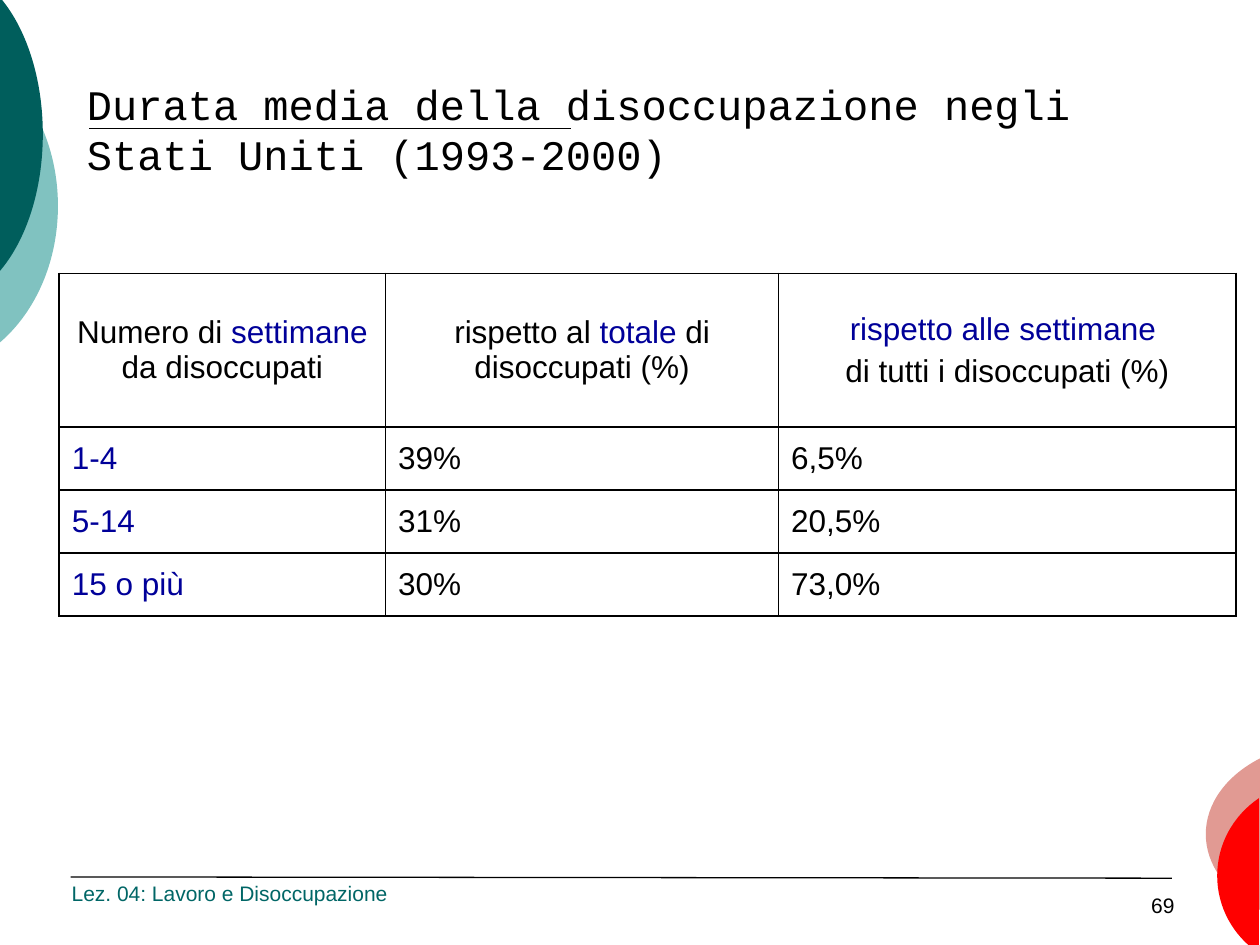
from pptx import Presentation
from pptx.dml.color import RGBColor
from pptx.enum.shapes import MSO_CONNECTOR
from pptx.enum.text import MSO_ANCHOR, MSO_AUTO_SIZE, PP_ALIGN
from pptx.oxml.ns import qn
from pptx.util import Inches, Pt
from lxml.etree import SubElement

BLACK = RGBColor(0x00, 0x00, 0x00)
WHITE = RGBColor(0xFF, 0xFF, 0xFF)
NAVY = RGBColor(0x00, 0x00, 0x99)
TEAL = RGBColor(0x00, 0x66, 0x66)
DARK_TEAL = RGBColor(0x00, 0x5E, 0x5C)
LIGHT_TEAL = RGBColor(0x80, 0xC2, 0xC0)
PINK = RGBColor(0xE1, 0x9A, 0x93)
RED = RGBColor(0xFF, 0x00, 0x00)

ARC_STEPS = [
    ("a:moveTo", [(784, 90)]),
    ("a:cubicBezTo", [(920, 184), (1000, 336), (1000, 500)]),
    ("a:cubicBezTo", [(1000, 664), (920, 816), (784, 910)]),
    ("a:lnTo", [(784, 90)]),
    ("a:close", []),
]
COLUMN_WIDTHS = [2.59, 3.12, 3.63]
ROW_HEIGHTS = [1.22, 0.5, 0.5, 0.5]
HEADER = [
    [[("Numero di ", BLACK), ("settimane", NAVY), (" da disoccupati", BLACK)]],
    [[("rispetto al ", BLACK), ("totale", NAVY), (" di disoccupati (%)", BLACK)]],
    [[("rispetto alle settimane ", NAVY)], [("di tutti i disoccupati (%)", BLACK)]],
]
DURATIONS = [
    ("1-4", "39%", "6,5%"),
    ("5-14", "31%", "20,5%"),
    ("15 o più", "30%", "73,0%"),
]


def add_arc(page, left, top, width, height, color, rotation=0):
    """Add the filled right-hand segment of an ellipse that fills the given frame."""
    builder = page.shapes.build_freeform(Inches(left), Inches(top))
    builder.add_line_segments([(Inches(left + width), Inches(top + height))])
    shape = builder.convert_to_shape()
    outline = shape._element.spPr.find(".//" + qn("a:path"))
    outline.clear()
    outline.set("w", "1000")
    outline.set("h", "1000")
    for tag, points in ARC_STEPS:
        step = SubElement(outline, qn(tag))
        for x, y in points:
            SubElement(step, qn("a:pt"), x=str(x), y=str(y))
    shape.rotation = rotation
    shape.shadow.inherit = False
    shape.fill.solid()
    shape.fill.fore_color.rgb = color
    shape.line.fill.background()


def add_rule(page, left, top, right, bottom, weight):
    """Add a thin black line."""
    rule = page.shapes.add_connector(
        MSO_CONNECTOR.STRAIGHT, Inches(left), Inches(top), Inches(right), Inches(bottom)
    )
    rule.line.color.rgb = BLACK
    rule.line.width = Pt(weight)
    SubElement(rule._element.spPr, qn("a:effectLst"))


def set_font(font, name, size, color):
    """Set the typeface, size and colour of a font."""
    font.name = name
    font.size = Pt(size)
    font.color.rgb = color


def add_title(page, text):
    """Place and format the title placeholder."""
    title = page.shapes.title
    title.left, title.top = Inches(0.59), Inches(0.57)
    title.width, title.height = Inches(8.74), Inches(0.9)
    frame = title.text_frame
    frame.text = text
    frame.word_wrap = True
    frame.auto_size = MSO_AUTO_SIZE.NONE
    frame.vertical_anchor = MSO_ANCHOR.BOTTOM
    para = frame.paragraphs[0]
    para.alignment = PP_ALIGN.LEFT
    set_font(para.font, "Courier New", 24, BLACK)


def add_label(page, text, left, top, width, height, color, alignment):
    """Add a small text box anchored at its bottom."""
    box = page.shapes.add_textbox(Inches(left), Inches(top), Inches(width), Inches(height))
    frame = box.text_frame
    frame.text = text
    frame.word_wrap = True
    frame.vertical_anchor = MSO_ANCHOR.BOTTOM
    para = frame.paragraphs[0]
    para.alignment = alignment
    set_font(para.font, "Arial", 12, color)


def add_borders(cell):
    """Draw a black line on every side of a cell."""
    properties = cell._tc.get_or_add_tcPr()
    for side in ("a:lnL", "a:lnR", "a:lnT", "a:lnB"):
        line = SubElement(properties, qn(side), w=str(Pt(1)))
        fill = SubElement(line, qn("a:solidFill"))
        SubElement(fill, qn("a:srgbClr"), val=str(BLACK))


def fill_cell(cell, lines, alignment):
    """Write coloured lines of text in a white bordered cell."""
    add_borders(cell)
    cell.fill.solid()
    cell.fill.fore_color.rgb = WHITE
    cell.vertical_anchor = MSO_ANCHOR.MIDDLE
    frame = cell.text_frame
    for index, spans in enumerate(lines):
        para = frame.add_paragraph() if index else frame.paragraphs[0]
        para.alignment = alignment
        para.space_before = Pt(3.6)
        for text, color in spans:
            span = para.add_run()
            span.text = text
            set_font(span.font, "Arial", 18, color)


def add_duration_table(page):
    """Add the table of unemployment durations."""
    table = page.shapes.add_table(
        len(ROW_HEIGHTS), len(COLUMN_WIDTHS), Inches(0.47), Inches(2.17),
        Inches(sum(COLUMN_WIDTHS)), Inches(sum(ROW_HEIGHTS)),
    ).table
    for column, width in zip(table.columns, COLUMN_WIDTHS):
        column.width = Inches(width)
    for row, height in zip(table.rows, ROW_HEIGHTS):
        row.height = Inches(height)
    for index, lines in enumerate(HEADER):
        fill_cell(table.cell(0, index), lines, PP_ALIGN.CENTER)
    for row, values in enumerate(DURATIONS, start=1):
        for column, value in enumerate(values):
            color = BLACK if column else NAVY
            fill_cell(table.cell(row, column), [[(value, color)]], PP_ALIGN.LEFT)


def main():
    """Build the slide and save it."""
    deck = Presentation()
    deck.slide_width, deck.slide_height = Inches(10), Inches(7.5)
    page = deck.slides.add_slide(deck.slide_layouts[5])
    add_arc(page, -1.69, 0.31, 2.15, 2.65, LIGHT_TEAL)
    add_arc(page, -1.27, -0.27, 1.61, 2.67, DARK_TEAL)
    add_rule(page, 0.71, 1.02, 4.53, 1.02, 1)
    add_rule(page, 0.56, 6.96, 9.3, 6.97, 0.75)
    add_arc(page, 9.57, 5.88, 2.04, 1.48, PINK, rotation=180)
    add_arc(page, 9.66, 6.2, 1.53, 1.5, RED, rotation=180)
    add_label(page, "69", 8.15, 6.83, 1.27, 0.5, BLACK, PP_ALIGN.RIGHT)
    add_title(page, "Durata media della disoccupazione negli Stati Uniti (1993-2000)")
    add_label(
        page, "Lez. 04: Lavoro e Disoccupazione", 0.47, 6.91, 3.95, 0.33, TEAL, PP_ALIGN.LEFT
    )
    add_duration_table(page)
    deck.save("out.pptx")


if __name__ == "__main__":
    main()
